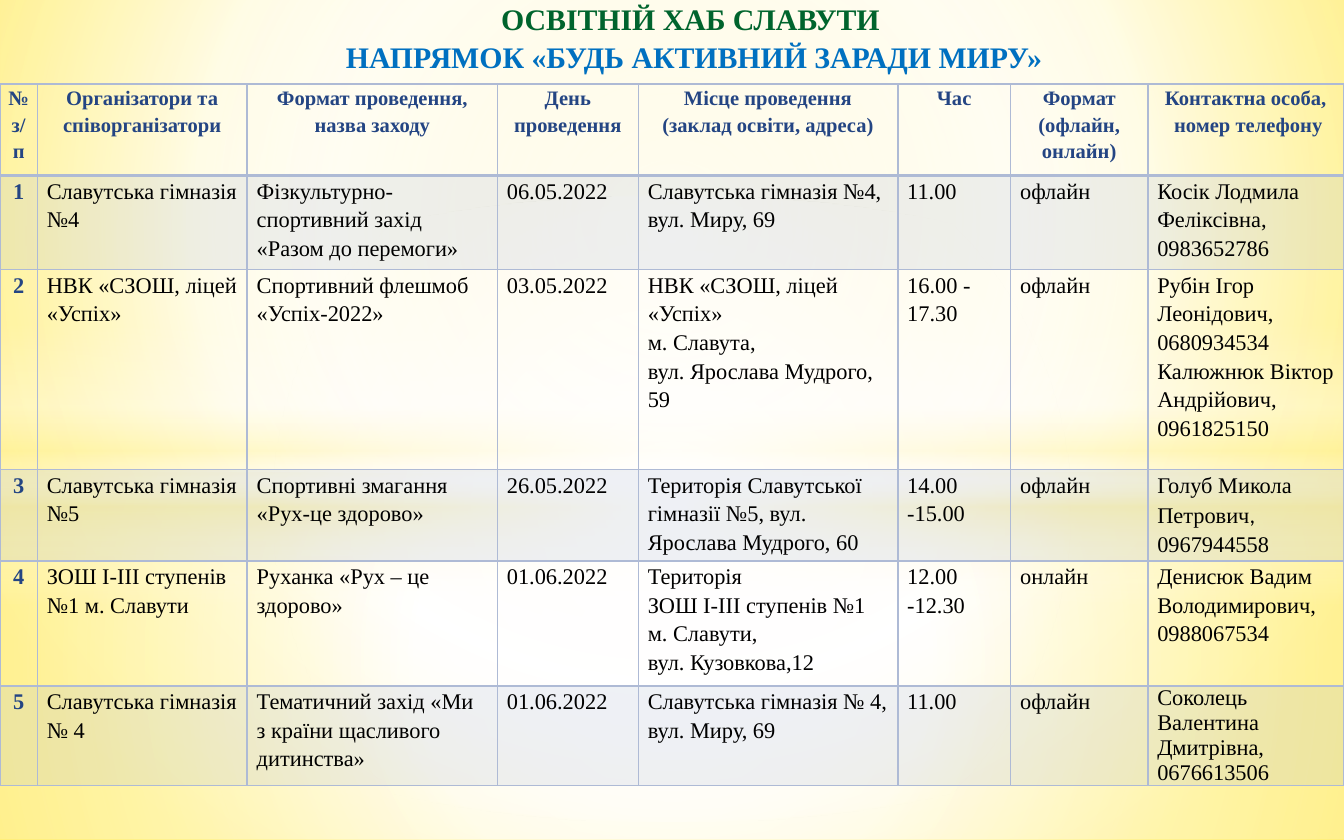
from dataclasses import dataclass

import pptx
import pptx.dml.color
import pptx.enum.shapes
import pptx.enum.text
import pptx.oxml
import pptx.oxml.ns
import pptx.util
from pptx.util import Pt

RGBColor = pptx.dml.color.RGBColor
MSO_SHAPE = pptx.enum.shapes.MSO_SHAPE
PP_ALIGN = pptx.enum.text.PP_ALIGN
qn = pptx.oxml.ns.qn

WHITE = RGBColor(0xFF, 0xFF, 0xFF)
PALE_YELLOW = RGBColor(0xFF, 0xF3, 0x9D)
LEMON = RGBColor(0xFF, 0xF1, 0x8D)
GOLD = RGBColor(0xFF, 0xE9, 0x4E)
BORDER = RGBColor(0xAE, 0xBA, 0xD5)
NAVY = RGBColor(0x24, 0x45, 0x83)
BLACK = RGBColor(0, 0, 0)
GREEN = RGBColor(0x00, 0x64, 0x2D)
BLUE = RGBColor(0x00, 0x70, 0xC0)
FONT = "Times New Roman"
NAMESPACE = pptx.oxml.ns.nsdecls("a")
WIDTH, HEIGHT = 720, 450


@dataclass
class Stop:
    position: int
    color: RGBColor
    opacity: int = 100


@dataclass
class Glow:
    preset: MSO_SHAPE
    top: float
    height: float
    stops: list[Stop]
    direction: str


@dataclass
class Span:
    text: str
    font: str = FONT


@dataclass
class CellStyle:
    size: float
    color: RGBColor
    bold: bool
    centered: bool
    inset: float
    line_spacing: float = 1.15


def radial(left: int, top: int, right: int, bottom: int) -> str:
    return (f'<a:path path="circle"><a:fillToRect l="{left}000" t="{top}000" '
            f'r="{right}000" b="{bottom}000"/></a:path>')


def gradient(stops: list[Stop], direction: str):
    marks = "".join(
        f'<a:gs pos="{stop.position}000"><a:srgbClr val="{stop.color}">'
        f'<a:alpha val="{stop.opacity}000"/></a:srgbClr></a:gs>' for stop in stops)
    return pptx.oxml.parse_xml(
        f'<a:gradFill {NAMESPACE} rotWithShape="1"><a:gsLst>{marks}</a:gsLst>{direction}</a:gradFill>')


def replace_solid(parent, new_fill) -> None:
    parent.replace(parent.find(qn("a:solidFill")), new_fill)


def add_glow(slide, glow: Glow) -> None:
    shape = slide.shapes.add_shape(glow.preset, 0, Pt(glow.top), Pt(WIDTH), Pt(glow.height))
    shape.shadow.inherit = False
    shape.line.fill.background()
    shape.fill.solid()
    replace_solid(shape.element.spPr, gradient(glow.stops, glow.direction))


def format_run(run, size: float, color: RGBColor, bold: bool, font: str = FONT) -> None:
    run.font.name, run.font.size, run.font.bold = font, Pt(size), bold
    run.font.color.rgb = color


def frame_cell(cell, bottom_width: float, shaded: bool) -> None:
    properties = cell._tc.get_or_add_tcPr()
    for side, width in (("L", 1), ("R", 1), ("T", 1), ("B", bottom_width)):
        properties.append(pptx.oxml.parse_xml(
            f'<a:ln{side} {NAMESPACE} w="{Pt(width)}"><a:solidFill>'
            f'<a:srgbClr val="{BORDER}"/></a:solidFill></a:ln{side}>'))
    if not shaded:
        cell.fill.background()
        return
    cell.fill.solid()
    cell.fill.fore_color.rgb = BORDER
    color = properties.find(qn("a:solidFill")).find(qn("a:srgbClr"))
    color.append(pptx.oxml.parse_xml(f'<a:alpha {NAMESPACE} val="20000"/>'))


def write_cell(cell, content: str | list[Span], style: CellStyle) -> None:
    cell.margin_left = cell.margin_right = Pt(style.inset)
    cell.margin_top = cell.margin_bottom = 0
    lines = [[Span(line)] for line in content.split("\n")] if isinstance(content, str) else [content]
    for index, spans in enumerate(lines):
        paragraph = cell.text_frame.paragraphs[0] if index == 0 else cell.text_frame.add_paragraph()
        paragraph.alignment = PP_ALIGN.CENTER if style.centered else PP_ALIGN.LEFT
        paragraph.line_spacing = style.line_spacing
        for span in spans:
            run = paragraph.add_run()
            run.text = span.text
            format_run(run, style.size, style.color, style.bold, span.font)


GLOWS = [
    Glow(MSO_SHAPE.RECTANGLE, 253.4, 196.6,
         [Stop(0, WHITE, 91), Stop(37, WHITE, 76), Stop(100, PALE_YELLOW, 79)], radial(50, 50, 50, 50)),
    Glow(MSO_SHAPE.RECTANGLE, 0, 253.4,
         [Stop(0, WHITE, 89), Stop(48, WHITE, 62), Stop(100, PALE_YELLOW, 79)], radial(50, 50, 50, 50)),
    Glow(MSO_SHAPE.RECTANGLE, 174.2, 149.8,
         [Stop(0, WHITE, 0), Stop(29, WHITE, 30), Stop(45, PALE_YELLOW, 40), Stop(55, WHITE, 26),
          Stop(65, PALE_YELLOW, 60), Stop(100, WHITE, 0)], '<a:lin ang="5400000" scaled="0"/>'),
    Glow(MSO_SHAPE.OVAL, 105.1, 334.8, [Stop(0, WHITE), Stop(54, WHITE, 0)], radial(50, 50, 50, 50)),
]
COLUMN_WIDTHS = [20, 112.5, 134, 75.5, 139, 60.5, 73.5, 105]
ROW_HEIGHTS = [49, 50.5, 107, 49, 67, 53]
ROWS = [
    ["№\nз/п", "Організатори та співорганізатори", "Формат проведення, назва заходу",
     "День проведення", "Місце проведення\n(заклад освіти, адреса)", "Час",
     "Формат\n(офлайн, онлайн)", "Контактна особа,\n номер телефону"],
    ["1", "Славутська гімназія №4", "Фізкультурно-спортивний захід «Разом до перемоги»", "06.05.2022",
     "Славутська гімназія №4, вул. Миру, 69", "11.00", "офлайн", "Косік Лодмила Феліксівна, 0983652786"],
    ["2", "НВК «СЗОШ, ліцей «Успіх»", "Спортивний флешмоб «Успіх-2022»", "03.05.2022",
     "НВК «СЗОШ, ліцей «Успіх»\nм. Славута,\nвул. Ярослава Мудрого, 59", "16.00 - 17.30", "офлайн",
     "Рубін Ігор Леонідович, 0680934534\nКалюжнюк Віктор Андрійович, 0961825150"],
    ["3", "Славутська гімназія №5", "Спортивні змагання «Рух-це здорово»", "26.05.2022",
     "Територія Славутської гімназії №5, вул. Ярослава Мудрого, 60", "14.00 -15.00", "офлайн",
     [Span("Голуб Микола Петрович"), Span(", ", "Calibri"), Span("0967944558")]],
    ["4", "ЗОШ І-ІІІ ступенів №1 м. Славути", "Руханка «Рух – це здорово»", "01.06.2022",
     "Територія\nЗОШ І-ІІІ ступенів №1 м. Славути,\nвул. Кузовкова,12", "12.00 -12.30", "онлайн",
     "Денисюк Вадим Володимирович,\n0988067534"],
    ["5", "Славутська гімназія № 4", "Тематичний захід «Ми з країни щасливого дитинства»", "01.06.2022",
     "Славутська гімназія № 4, вул. Миру, 69", "11.00", "офлайн", "Соколець Валентина Дмитрівна, 0676613506"],
]
HEADER = CellStyle(11, NAVY, True, True, 3.6)
NUMBER = CellStyle(12, NAVY, True, True, 3.6)
BODY = CellStyle(12, BLACK, False, False, 5.1)
COMPACT = CellStyle(12, BLACK, False, False, 5.1, 1.0)


def cell_style(row: int, column: int) -> CellStyle:
    if row == 0:
        return HEADER
    if column == 0:
        return NUMBER
    is_last = row == len(ROWS) - 1 and column == len(COLUMN_WIDTHS) - 1
    return COMPACT if is_last else BODY


def add_schedule(slide) -> None:
    table = slide.shapes.add_table(len(ROWS), len(COLUMN_WIDTHS), 0, Pt(45),
                                   Pt(WIDTH), Pt(sum(ROW_HEIGHTS))).table
    table.first_row = table.horz_banding = False
    for column, width in zip(table.columns, COLUMN_WIDTHS):
        column.width = Pt(width)
    for row_index, (height, row) in enumerate(zip(ROW_HEIGHTS, ROWS)):
        table.rows[row_index].height = Pt(height)
        for column_index, content in enumerate(row):
            cell = table.cell(row_index, column_index)
            write_cell(cell, content, cell_style(row_index, column_index))
            # The header's bottom edge is shared with the first body row
            frame_cell(cell, 2 if row_index == 0 else 1, row_index % 2 == 1)


def add_title(slide) -> None:
    frame = slide.shapes.add_textbox(Pt(20), Pt(0.5), Pt(700), Pt(40)).text_frame
    frame.word_wrap = True
    frame.margin_top = frame.margin_bottom = 0
    frame.text = "ОСВІТНІЙ ХАБ СЛАВУТИ\n НАПРЯМОК «БУДЬ АКТИВНИЙ ЗАРАДИ МИРУ»"
    for paragraph, color in zip(frame.paragraphs, (GREEN, BLUE)):
        paragraph.alignment = PP_ALIGN.CENTER
        format_run(paragraph.runs[0], 16, color, True)
    frame.paragraphs[1].space_before = Pt(1)


def main() -> None:
    presentation = pptx.Presentation()
    presentation.slide_width, presentation.slide_height = Pt(WIDTH), Pt(HEIGHT)
    slide = presentation.slides.add_slide(presentation.slide_layouts[6])

    # Background and its glows
    slide.background.fill.solid()
    background = slide.element.cSld.find(qn("p:bg")).find(qn("p:bgPr"))
    replace_solid(background, gradient([Stop(0, LEMON), Stop(60, WHITE), Stop(100, GOLD)],
                                       radial(20, 10, 20, 60)))
    for glow in GLOWS:
        add_glow(slide, glow)

    # Schedule and title
    add_schedule(slide)
    add_title(slide)
    presentation.save("out.pptx")


if __name__ == "__main__":
    main()
